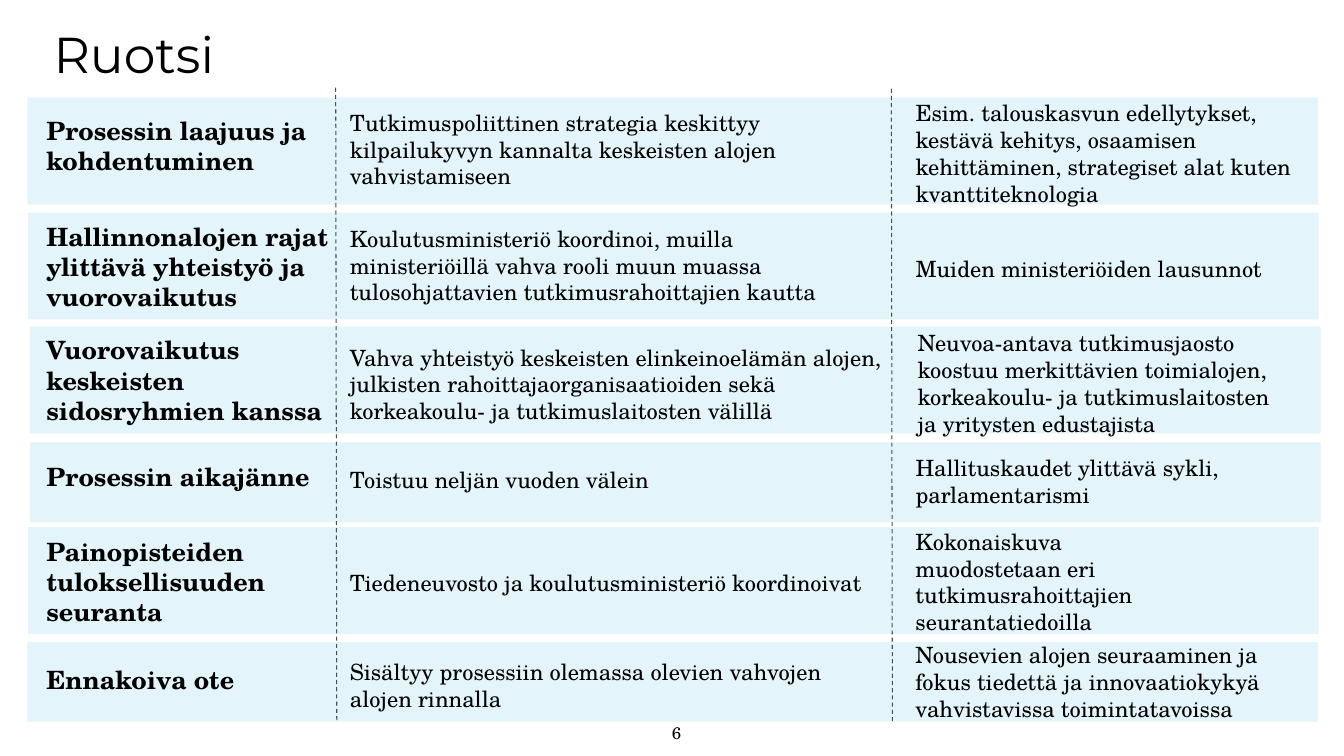
from dataclasses import dataclass

from lxml.etree import SubElement
from pptx import Presentation
from pptx.dml.color import RGBColor
from pptx.enum.dml import MSO_LINE
from pptx.enum.shapes import MSO_CONNECTOR, MSO_SHAPE
from pptx.enum.text import MSO_ANCHOR, MSO_AUTO_SIZE, PP_ALIGN
from pptx.oxml.ns import qn
from pptx.util import Inches, Pt


@dataclass(frozen=True)
class Theme:
    """Colours, fonts and type sizes of the slide."""
    ink: RGBColor = RGBColor(0, 0, 0)
    band: RGBColor = RGBColor(0xE3, 0xF5, 0xFB)
    divider: RGBColor = RGBColor(0x38, 0x58, 0x4B)
    title_font: str = "Montserrat"
    text_font: str = "TeX Gyre Schola"
    title_size: int = 36
    label_size: int = 18
    text_size: int = 16
    number_size: int = 12


@dataclass(frozen=True)
class Box:
    """An area in grid units: the slide is 100 columns by 100 rows."""
    left: float
    top: float
    width: float
    height: float

    @property
    def middle(self):
        """Return the vertical centre in rows."""
        return self.top + self.height / 2

    def lengths(self):
        """Return left, top, width and height as slide lengths."""
        return (columns(self.left), rows(self.top),
                columns(self.width), rows(self.height))


@dataclass(frozen=True)
class Cell:
    """A text, its width and its nudge from the centre of the band."""
    text: str
    width: float
    down: float = 0
    right: float = 0


THEME = Theme()
SLIDE_WIDTH, SLIDE_HEIGHT = Inches(13.33), Inches(7.5)
CELL_LEFTS = (2.85, 25.43, 67.52)
CELL_HEIGHT = 14.13
BAND_WIDTH, TALL, LOW = 96.02, 14.13, 10.53

BANDS = [
    (Box(2.03, 12.93, BAND_WIDTH, TALL), (
        Cell("Prosessin laajuus ja kohdentuminen", 20.71, -0.8),
        Cell("Tutkimuspoliittinen strategia keskittyy kilpailukyvyn kannalta "
             "keskeisten alojen vahvistamiseen", 39.53, -0.27),
        Cell("Esim. talouskasvun edellytykset, kestävä kehitys, osaamisen "
             "kehittäminen, strategiset alat kuten kvanttiteknologia", 29.78, 0.27))),
    (Box(2.1, 28.13, BAND_WIDTH, TALL), (
        Cell("Hallinnonalojen rajat ylittävä yhteistyö ja vuorovaikutus", 24.01, 0.07),
        Cell("Koulutusministeriö koordinoi, muilla ministeriöillä vahva rooli "
             "muun muassa tulosohjattavien tutkimusrahoittajien kautta", 40.51, -0.13),
        Cell("Muiden ministeriöiden lausunnot", 31.21, 0.27))),
    (Box(2.25, 43.2, BAND_WIDTH, TALL), (
        Cell("Vuorovaikutus keskeisten sidosryhmien kanssa", 22.06),
        Cell("Vahva yhteistyö keskeisten elinkeinoelämän alojen, julkisten "
             "rahoittajaorganisaatioiden sekä korkeakoulu- ja tutkimuslaitosten "
             "välillä", 42.16, 0.53),
        Cell("Neuvoa-antava tutkimusjaosto koostuu merkittävien toimialojen, "
             "korkeakoulu- ja tutkimuslaitosten ja yritysten edustajista",
             28.81, 0.4, 0.15))),
    (Box(2.25, 58.53, BAND_WIDTH, LOW), (
        Cell("Prosessin aikajänne", 22.2, -0.73),
        Cell("Toistuu neljän vuoden välein", 40.66, -0.33),
        Cell("Hallituskaudet ylittävä sykli, parlamentarismi", 27.53, -0.2))),
    (Box(2.1, 69.73, BAND_WIDTH, TALL), (
        Cell("Painopisteiden tuloksellisuuden seuranta", 17.7, 0.13),
        Cell("Tiedeneuvosto ja koulutusministeriö koordinoivat", 40.44, 0.27),
        Cell("Kokonaiskuva muodostetaan eri tutkimusrahoittajien "
             "seurantatiedoilla", 22.66, 0.13))),
    (Box(2.03, 84.93, BAND_WIDTH, LOW), (
        Cell("Ennakoiva ote", 17.7, -0.33),
        Cell("Sisältyy prosessiin olemassa olevien vahvojen alojen rinnalla",
             40.14, 0.47),
        Cell("Nousevien alojen seuraaminen ja fokus tiedettä ja "
             "innovaatiokykyä vahvistavissa toimintatavoissa", 29.93, -0.07))),
]


def columns(count):
    """Turn grid columns into a length."""
    return round(SLIDE_WIDTH * count / 100)


def rows(count):
    """Turn grid rows into a length."""
    return round(SLIDE_HEIGHT * count / 100)


def write(shape, text, size=THEME.text_size, font=THEME.text_font, bold=False,
          align=PP_ALIGN.LEFT, anchor=MSO_ANCHOR.MIDDLE, inset=0.08):
    """Put one formatted paragraph into a shape."""
    frame = shape.text_frame
    frame.word_wrap = True
    frame.auto_size = MSO_AUTO_SIZE.NONE
    frame.vertical_anchor = anchor
    frame.margin_left = frame.margin_right = Inches(inset)
    frame.margin_top = frame.margin_bottom = Inches(inset / 2)
    para = frame.paragraphs[0]
    para.alignment = align
    span = para.add_run()
    span.text = text
    span.font.name = font
    span.font.size = Pt(size)
    span.font.bold = bold
    span.font.color.rgb = THEME.ink


def add_title(page, box, text):
    """Move and fill the title placeholder."""
    title = page.shapes.title
    title.left, title.top, title.width, title.height = box.lengths()
    write(title, text, size=THEME.title_size, font=THEME.title_font,
          anchor=MSO_ANCHOR.TOP, inset=0.1)


def add_band(page, box, cells):
    """Draw one coloured band with its label and two texts."""
    band = page.shapes.add_shape(MSO_SHAPE.RECTANGLE, *box.lengths())
    band.shadow.inherit = False
    band.fill.solid()
    band.fill.fore_color.rgb = THEME.band
    band.line.fill.background()
    for index, (left, cell) in enumerate(zip(CELL_LEFTS, cells)):
        area = Box(left + cell.right, box.middle + cell.down - CELL_HEIGHT / 2,
                   cell.width, CELL_HEIGHT)
        is_label = index == 0
        write(page.shapes.add_textbox(*area.lengths()), cell.text, bold=is_label,
              size=THEME.label_size if is_label else THEME.text_size)


def add_divider(page, box):
    """Draw a dashed line from the top left to the bottom right of a box."""
    left, top, width, height = box.lengths()
    line = page.shapes.add_connector(MSO_CONNECTOR.STRAIGHT, left, top,
                                     left + width, top + height)
    line.line.color.rgb = THEME.divider
    line.line.width = Pt(0.75)
    line.line.dash_style = MSO_LINE.DASH
    SubElement(line._element.spPr, qn("a:effectLst"))


def add_page_number(page, box, text):
    """Write the centred page number."""
    write(page.shapes.add_textbox(*box.lengths()), text, size=THEME.number_size,
          align=PP_ALIGN.CENTER, inset=0.1)


def main():
    """Build the slide and save the deck."""
    deck = Presentation()
    deck.slide_width, deck.slide_height = SLIDE_WIDTH, SLIDE_HEIGHT
    page = deck.slides.add_slide(deck.slide_layouts[5])
    add_title(page, Box(3.23, 2.4, 82.67, 16.53), "Ruotsi")
    for box, cells in BANDS:
        add_band(page, box, cells)
    add_divider(page, Box(24.98, 11.6, 0.08, 84))
    add_divider(page, Box(66.32, 11.73, 0.08, 84))
    add_page_number(page, Box(39.08, 89.87, 22.51, 14.13), "6")
    deck.save("out.pptx")


if __name__ == "__main__":
    main()
